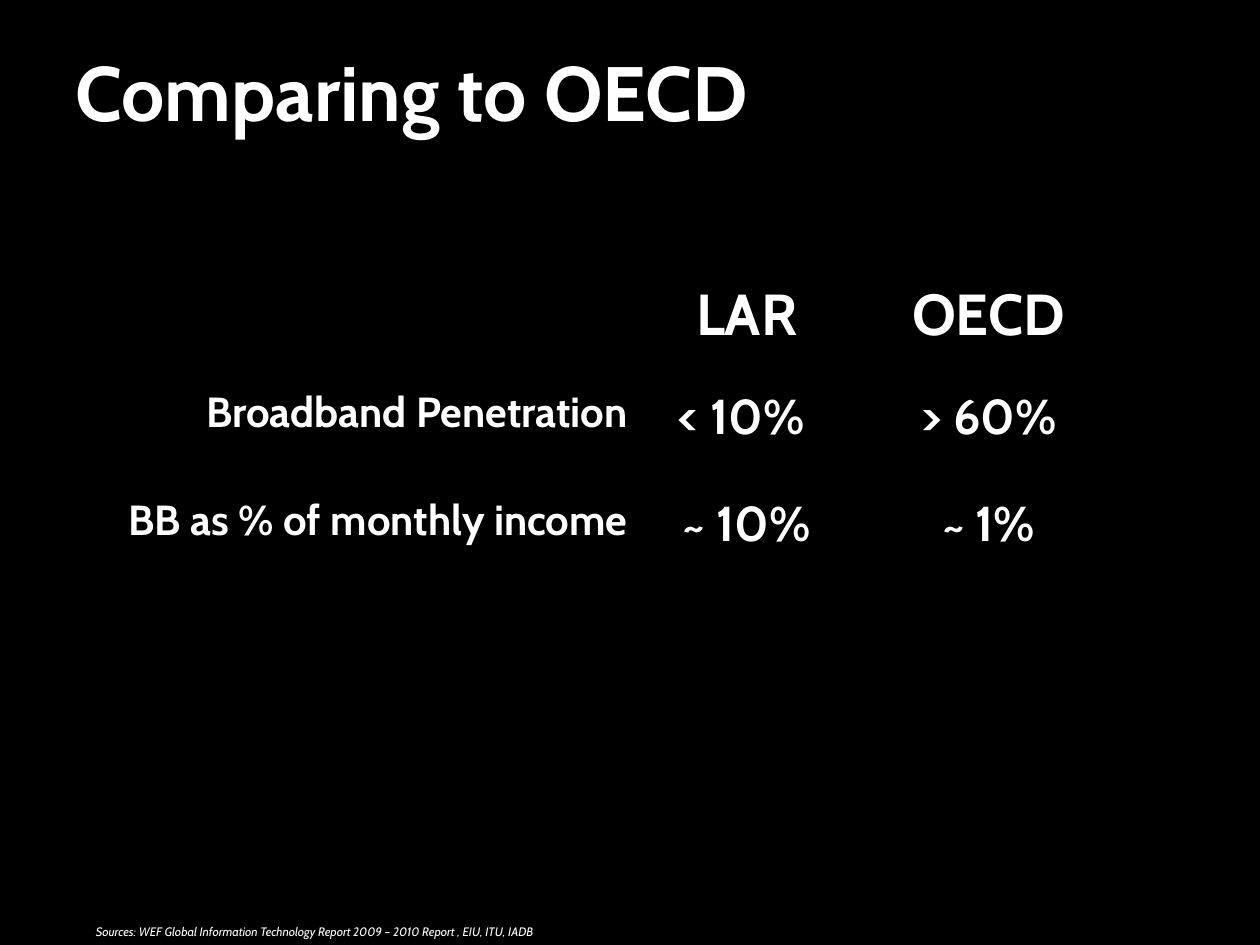
"""Build a slide comparing broadband figures for LAR and OECD."""
from typing import NamedTuple

from pptx import Presentation
from pptx.dml.color import RGBColor
from pptx.enum.text import MSO_ANCHOR as Anchor, PP_ALIGN as Align
from pptx.oxml.ns import qn
from pptx.util import Pt

COLORS = {"background": "000000", "text": "FFFFFF"}
FONT = "Cabin"
NO_STYLE_NO_GRID = "{2D5ABB26-0587-4C30-8999-92F81FD0307C}"
COL_WIDTHS = (342, 121.7, 154.8)
ROW_HEIGHT = 61.4
ROW_COUNT = 5


class Style(NamedTuple):
    size: float
    align: Align = Align.CENTER
    bold: bool = True
    italic: bool = False


TITLE = Style(44, Align.LEFT)
HEADER = Style(33)
LABEL = Style(24, Align.RIGHT)
VALUE = Style(28)
SOURCE = Style(7, Align.RIGHT, bold=False, italic=True)


class Row(NamedTuple):
    texts: tuple[str, str, str]
    styles: tuple[Style, Style, Style] = (LABEL, VALUE, VALUE)


ROWS = (
    Row(("", "LAR", "OECD"), (LABEL, HEADER, HEADER)),
    Row(("Broadband Penetration", "< 10% ", "> 60%")),
    Row(("BB as % of monthly income", "~ 10%", "~ 1%")),
)


def write(tf, text: str, style: Style) -> None:
    """Write one styled run into the first paragraph of a text frame."""
    p = tf.paragraphs[0]
    p.alignment = style.align
    r = p.add_run()
    r.text = text
    r.font.name = FONT
    r.font.size = Pt(style.size)
    r.font.bold = style.bold
    r.font.italic = style.italic
    r.font.color.rgb = RGBColor.from_string(COLORS["text"])


def add_title(s, text: str) -> None:
    """Place and fill the title placeholder."""
    sp = s.shapes.title
    sp.left, sp.top, sp.width, sp.height = Pt(36), Pt(21.6), Pt(648), Pt(90)
    sp.text_frame.vertical_anchor = Anchor.TOP
    write(sp.text_frame, text, TITLE)


def add_comparison(s, rows: tuple[Row, ...]) -> None:
    """Draw the comparison as a table without fills or borders."""
    frame = s.shapes.add_table(
        ROW_COUNT, len(COL_WIDTHS), Pt(23.8), Pt(156.2),
        Pt(sum(COL_WIDTHS)), Pt(ROW_HEIGHT * ROW_COUNT),
    )
    table = frame.table
    table.first_row = table.horz_banding = False
    next(frame.element.iter(qn("a:tableStyleId"))).text = NO_STYLE_NO_GRID
    for column, width in zip(table.columns, COL_WIDTHS):
        column.width = Pt(width)
    for table_row in table.rows:
        table_row.height = Pt(ROW_HEIGHT)
    for cell in table.iter_cells():
        cell.fill.background()
    for i, row in enumerate(rows):
        for j, (text, style) in enumerate(zip(row.texts, row.styles)):
            if text:
                write(table.cell(i, j).text_frame, text, style)


def add_source(s, text: str) -> None:
    """Add the source line at the foot of the slide."""
    sp = s.shapes.add_textbox(Pt(0), Pt(516.2), Pt(311.8), Pt(23.8))
    tf = sp.text_frame
    tf.word_wrap = True
    tf.vertical_anchor = Anchor.BOTTOM
    write(tf, text, SOURCE)


def main() -> None:
    """Build and save the presentation."""
    prs = Presentation()
    prs.slide_width, prs.slide_height = Pt(720), Pt(540)
    s = prs.slides.add_slide(prs.slide_layouts[5])
    s.background.fill.solid()
    s.background.fill.fore_color.rgb = RGBColor.from_string(COLORS["background"])
    add_title(s, "Comparing to OECD")
    add_comparison(s, ROWS)
    add_source(s, "Sources: WEF Global Information Technology Report 2009 – 2010 Report , EIU, ITU, IADB")
    prs.save("out.pptx")


if __name__ == "__main__":
    main()
